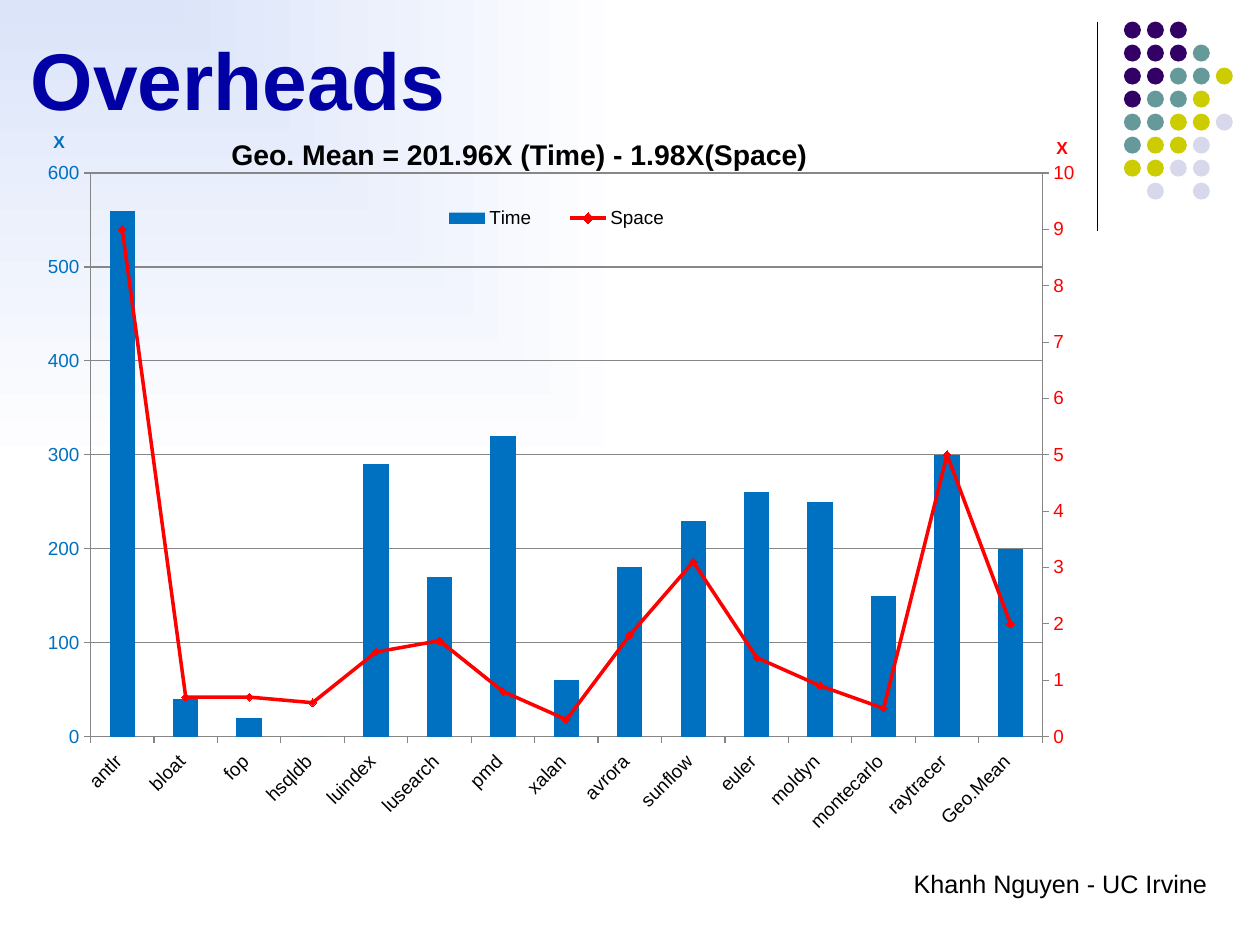
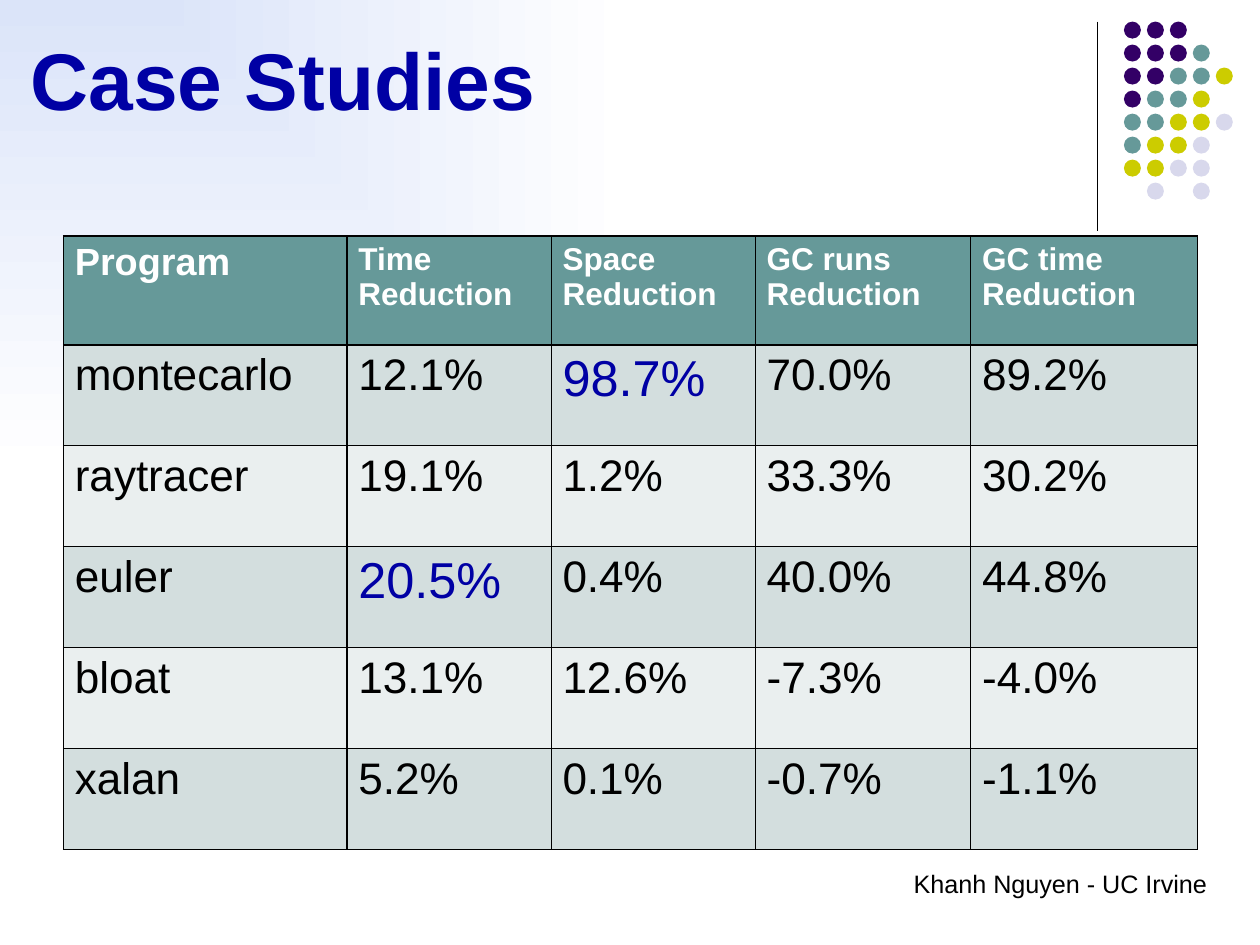
from copy import deepcopy
from dataclasses import dataclass

from pptx import Presentation
from pptx.chart.axis import CategoryAxis, ValueAxis
from pptx.chart.chart import Chart
from pptx.chart.data import CategoryChartData
from pptx.dml.color import RGBColor
from pptx.enum.chart import (XL_CHART_TYPE, XL_LEGEND_POSITION, XL_MARKER_STYLE,
                             XL_TICK_LABEL_POSITION, XL_TICK_MARK)
from pptx.enum.shapes import MSO_CONNECTOR, MSO_SHAPE
from pptx.enum.text import MSO_ANCHOR, PP_ALIGN
from pptx.oxml import parse_xml
from pptx.oxml.ns import nsdecls
from pptx.slide import Slide
from pptx.text.text import TextFrame
from pptx.util import Inches, Pt

COLOURS = {
    "sky": "DBE4F9", "white": "FFFFFF", "black": "000000", "navy": "0000A4",
    "purple": "330066", "teal": "669999", "olive": "CCCC00", "lilac": "D8D8EC",
    "blue": "0070C0", "red": "FF0000", "grey": "868686",
    "band_dark": "D3DEDE", "band_light": "EAEFEF",
}
FONT = "Arial"
DOT_ROWS = ["PPP", "PPPT", "PPTTY", "PTTY", "TTYYL", "TYYL", "YYLL", " L L"]
DOT_COLOURS = {"P": "purple", "T": "teal", "Y": "olive", "L": "lilac"}


@dataclass(frozen=True)
class Benchmark:
    name: str
    time: float
    space: float


@dataclass(frozen=True)
class Scale:
    """A value axis: its colour, range, step and the place of its title."""
    colour: str
    maximum: float
    step: float
    title_x: float
    title_y: float


@dataclass(frozen=True)
class StudyRow:
    cells: tuple[str, ...]
    highlight: int | None = None


BENCHMARKS = [
    Benchmark("antlr ", 560, 9), Benchmark("bloat ", 40, 0.7),
    Benchmark("fop ", 20, 0.7), Benchmark("hsqldb ", 0, 0.6),
    Benchmark("luindex ", 290, 1.5), Benchmark("lusearch ", 170, 1.7),
    Benchmark("pmd ", 320, 0.8), Benchmark("xalan ", 60, 0.3),
    Benchmark("avrora ", 180, 1.8), Benchmark("sunflow ", 230, 3.1),
    Benchmark("euler ", 260, 1.4), Benchmark("moldyn ", 250, 0.9),
    Benchmark("montecarlo ", 150, 0.5), Benchmark("raytracer ", 300, 5),
    Benchmark("Geo.Mean ", 200, 2),
]
TIME_SCALE = Scale("blue", 600, 100, 0.014, 0.005)
SPACE_SCALE = Scale("red", 10, 1, 0.937, 0.014)
STUDY_HEADER = ("Program", "Time Reduction", "Space Reduction",
                "GC runs\nReduction", "GC time Reduction")
STUDY_ROWS = [
    StudyRow(("montecarlo", "12.1%", "98.7%", "70.0%", "89.2%"), highlight=2),
    StudyRow(("raytracer", "19.1%", "1.2%", "33.3%", "30.2%")),
    StudyRow(("euler", "20.5%", "0.4%", "40.0%", "44.8%"), highlight=1),
    StudyRow(("bloat", "13.1%", "12.6%", "-7.3%", "-4.0%")),
    StudyRow(("xalan", "5.2%", "0.1%", "-0.7%", "-1.1%")),
]


def rgb(name: str) -> RGBColor:
    return RGBColor.from_string(COLOURS[name])


def set_font(font, size: float, colour: str = "black", bold: bool = False) -> None:
    font.name, font.size, font.bold = FONT, Pt(size), bold
    font.color.rgb = rgb(colour)


def write_text(frame: TextFrame, text: str, *, size: float, colour: str = "black",
               bold: bool = False, align: PP_ALIGN | None = None,
               line_spacing: float | None = None) -> None:
    frame.text = text
    for para in frame.paragraphs:
        if align is not None:
            para.alignment = align
        if line_spacing is not None:
            para.line_spacing = line_spacing
        for span in para.runs:
            set_font(span.font, size, colour, bold)


def set_margins(frame: TextFrame, side: float, edge: float) -> None:
    frame.margin_left = frame.margin_right = Inches(side)
    frame.margin_top = frame.margin_bottom = Inches(edge)


def set_background(deck) -> None:
    """Give the master a gradient that spreads from the top left corner."""
    master = deck.slide_master
    master.background.fill.solid()
    properties = master.element.xpath("./p:cSld/p:bg/p:bgPr")[0]
    properties.replace(properties[0], parse_xml(
        f'<a:gradFill {nsdecls("a")} rotWithShape="0"><a:gsLst>'
        f'<a:gs pos="0"><a:srgbClr val="{COLOURS["sky"]}"/></a:gs>'
        f'<a:gs pos="100000"><a:srgbClr val="{COLOURS["white"]}"/></a:gs></a:gsLst>'
        '<a:path path="rect"><a:fillToRect r="100000" b="100000"/></a:path>'
        '</a:gradFill>'))


def add_dots(page: Slide) -> None:
    group = page.shapes.add_group_shape()
    for row, marks in enumerate(DOT_ROWS):
        for column, mark in enumerate(marks):
            if mark not in DOT_COLOURS:
                continue
            dot = group.shapes.add_shape(
                MSO_SHAPE.OVAL, Inches(9.91 + 0.81 * column / 4),
                Inches(0.19 + 1.42 * row / 7), Inches(0.15), Inches(0.15))
            dot.shadow.inherit = False
            dot.fill.solid()
            dot.fill.fore_color.rgb = rgb(DOT_COLOURS[mark])
            dot.line.fill.background()


def add_page(deck, title: str) -> Slide:
    """Add a slide with the shared title, rule, dots and footer."""
    page = deck.slides.add_slide(deck.slide_layouts[5])
    heading = page.shapes.title
    heading.left, heading.top = Inches(0.27), Inches(0.33)
    heading.width, heading.height = Inches(10.57), Inches(1)
    frame = heading.text_frame
    frame.vertical_anchor = MSO_ANCHOR.TOP
    set_margins(frame, 0, 0)
    write_text(frame, title, size=51, colour="navy", bold=True,
               align=PP_ALIGN.LEFT, line_spacing=0.95)

    rule = page.shapes.add_connector(MSO_CONNECTOR.STRAIGHT, Inches(9.68), Inches(0.19),
                                     Inches(9.68), Inches(2.04))
    rule.line.color.rgb = rgb("black")
    rule.line.width = Pt(0.75)
    rule.element.spPr.append(parse_xml(f'<a:effectLst {nsdecls("a")}/>'))
    add_dots(page)

    footer = page.shapes.add_textbox(Inches(7.59), Inches(7.59),
                                     Inches(3.52), Inches(0.56)).text_frame
    footer.word_wrap = True
    set_margins(footer, 0.11, 0.06)
    write_text(footer, "Khanh Nguyen - UC Irvine", size=16, align=PP_ALIGN.CENTER)
    return page


def place(owner, x: float, y: float, size: tuple[float, float] | None = None) -> None:
    """Set the manual layout of a chart part, in fractions of the chart."""
    for old in owner.xpath("./c:layout"):
        owner.remove(old)
    following = owner.xpath("./c:overlay|./c:barChart")[0]
    values = {"xMode": "edge", "yMode": "edge", "x": x, "y": y}
    if following.tag.endswith("barChart"):
        values = {"layoutTarget": "inner", **values}
    if size:
        values |= {"w": size[0], "h": size[1]}
    body = "".join(f'<c:{tag} val="{value}"/>' for tag, value in values.items())
    following.addprevious(parse_xml(
        f'<c:layout {nsdecls("c")}><c:manualLayout>{body}</c:manualLayout></c:layout>'))


def style_axis_line(axis) -> None:
    axis.format.line.color.rgb = rgb("grey")
    axis.format.line.width = Pt(0.75)
    axis.major_tick_mark = XL_TICK_MARK.OUTSIDE
    axis.minor_tick_mark = XL_TICK_MARK.NONE


def style_value_axis(element, scale: Scale) -> None:
    axis = ValueAxis(element)
    axis.minimum_scale, axis.maximum_scale = 0, scale.maximum
    axis.major_unit = scale.step
    style_axis_line(axis)
    set_font(axis.tick_labels.font, 12, scale.colour)
    write_text(axis.axis_title.text_frame, "X", size=11, colour=scale.colour, bold=True)
    title = element.xpath("./c:title")[0]
    title.xpath("./c:tx/c:rich/a:bodyPr")[0].set("rot", "0")
    place(title, scale.title_x, scale.title_y)


def move_space_to_right_axis(chart: Chart) -> None:
    """Turn the second series into a line with its own value axis."""
    area = chart.element.xpath("c:chart/c:plotArea")[0]
    columns = area.xpath("./c:barChart")[0]
    left = area.xpath("./c:valAx")[0]
    right, hidden = deepcopy(left), deepcopy(area.xpath("./c:catAx")[0])
    for axis, own, other in ((right, "5002", "5001"), (hidden, "5001", "5002")):
        axis.xpath("./c:axId")[0].set("val", own)
        cross = axis.xpath("./c:crossAx")[0]
        cross.set("val", other)
        for old in axis.xpath("./c:crosses"):
            axis.remove(old)
        cross.addnext(parse_xml(f'<c:crosses {nsdecls("c")} val="max"/>'))
    right.xpath("./c:axPos")[0].set("val", "r")
    left.addnext(right)
    right.addnext(hidden)

    lines = parse_xml(
        f'<c:lineChart {nsdecls("c")}><c:grouping val="stacked"/><c:varyColors val="0"/>'
        '<c:marker val="1"/><c:axId val="5001"/><c:axId val="5002"/></c:lineChart>')
    series = columns.xpath("./c:ser")[1]
    for flag in series.xpath("./c:invertIfNegative"):
        series.remove(flag)
    lines.xpath("./c:marker")[0].addprevious(series)
    columns.addnext(lines)

    CategoryAxis(hidden).visible = False
    ValueAxis(right).has_major_gridlines = False
    style_value_axis(right, SPACE_SCALE)


def add_overhead_chart(page: Slide) -> None:
    data = CategoryChartData()
    data.categories = [item.name for item in BENCHMARKS]
    data.add_series("Time", [item.time for item in BENCHMARKS])
    data.add_series("Space", [item.space for item in BENCHMARKS])
    chart = page.shapes.add_chart(XL_CHART_TYPE.COLUMN_CLUSTERED, Inches(0.31), Inches(1.08),
                                  Inches(9.58), Inches(6.75), data).chart
    set_font(chart.font, 10)
    move_space_to_right_axis(chart)
    area = chart.element.xpath("c:chart/c:plotArea")[0]
    place(area, 0.051, 0.066, (0.876, 0.736))
    area.append(parse_xml(
        f'<c:spPr {nsdecls("c", "a")}><a:noFill/><a:ln w="9525"><a:solidFill>'
        f'<a:srgbClr val="{COLOURS["grey"]}"/></a:solidFill></a:ln></c:spPr>'))

    write_text(chart.chart_title.text_frame, "Geo. Mean = 201.96X (Time) - 1.98X(Space)",
               size=18, bold=True)
    place(chart.element.xpath("c:chart/c:title")[0], 0.176, 0.011)
    chart.has_legend = True
    chart.legend.position = XL_LEGEND_POSITION.BOTTOM
    chart.legend.include_in_layout = False
    set_font(chart.legend.font, 12)
    place(chart.element.xpath("c:chart/c:legend")[0], 0.351, 0.1, (0.258, 0.05))

    style_value_axis(area.xpath("./c:valAx")[0], TIME_SCALE)
    gridlines = chart.value_axis.major_gridlines.format.line
    gridlines.color.rgb = rgb("grey")
    gridlines.width = Pt(0.75)
    names = chart.category_axis
    style_axis_line(names)
    names.tick_label_position = XL_TICK_LABEL_POSITION.NEXT_TO_AXIS
    set_font(names.tick_labels.font, 12)
    area.xpath("./c:catAx/c:txPr/a:bodyPr")[0].set("rot", "-2700000")
    for position in area.xpath("./c:valAx/c:tickLblPos"):
        position.set("val", "nextTo")

    columns, lines = chart.plots
    columns.gap_width = 150
    columns.vary_by_categories = False
    time, space = columns.series[0], lines.series[0]
    time.format.fill.solid()
    time.format.fill.fore_color.rgb = rgb("blue")
    space.smooth = False
    space.format.line.color.rgb = rgb("red")
    space.format.line.width = Pt(2.25)
    space.marker.style, space.marker.size = XL_MARKER_STYLE.DIAMOND, 5
    space.marker.format.fill.solid()
    space.marker.format.fill.fore_color.rgb = rgb("red")
    space.marker.format.line.color.rgb = rgb("red")


def add_study_table(page: Slide) -> None:
    widths = [2.5, 1.8, 1.8, 1.9, 2]
    heights = [0.96] + [0.89] * len(STUDY_ROWS)
    holder = page.shapes.add_table(len(heights), len(widths), Inches(0.56), Inches(2.08),
                                   Inches(sum(widths)), Inches(sum(heights)))
    table = holder.table
    for column, width in zip(table.columns, widths):
        column.width = Inches(width)
    for row, height in zip(table.rows, heights):
        row.height = Inches(height)

    for r, study in enumerate([StudyRow(STUDY_HEADER), *STUDY_ROWS]):
        for c, text in enumerate(study.cells):
            cell = table.cell(r, c)
            if r == 0:
                fill, style = "teal", {"size": 20 if c else 24, "colour": "white", "bold": True}
            else:
                fill = "band_dark" if r % 2 else "band_light"
                style = {"size": 32, "colour": "navy"} if c == study.highlight else {"size": 28}
            cell.fill.solid()
            cell.fill.fore_color.rgb = rgb(fill)
            write_text(cell.text_frame, text, **style)

    for properties in holder.element.xpath(".//a:tcPr"):
        for index, side in enumerate("LRTB"):
            properties.insert(index, parse_xml(
                f'<a:ln{side} {nsdecls("a")} w="12700"><a:solidFill>'
                f'<a:srgbClr val="{COLOURS["black"]}"/></a:solidFill></a:ln{side}>'))


def main() -> None:
    deck = Presentation()
    deck.slide_width, deck.slide_height = Inches(11.11), Inches(8.33)
    set_background(deck)
    add_overhead_chart(add_page(deck, "Overheads"))
    add_study_table(add_page(deck, "Case Studies"))
    deck.save("out.pptx")


if __name__ == "__main__":
    main()
